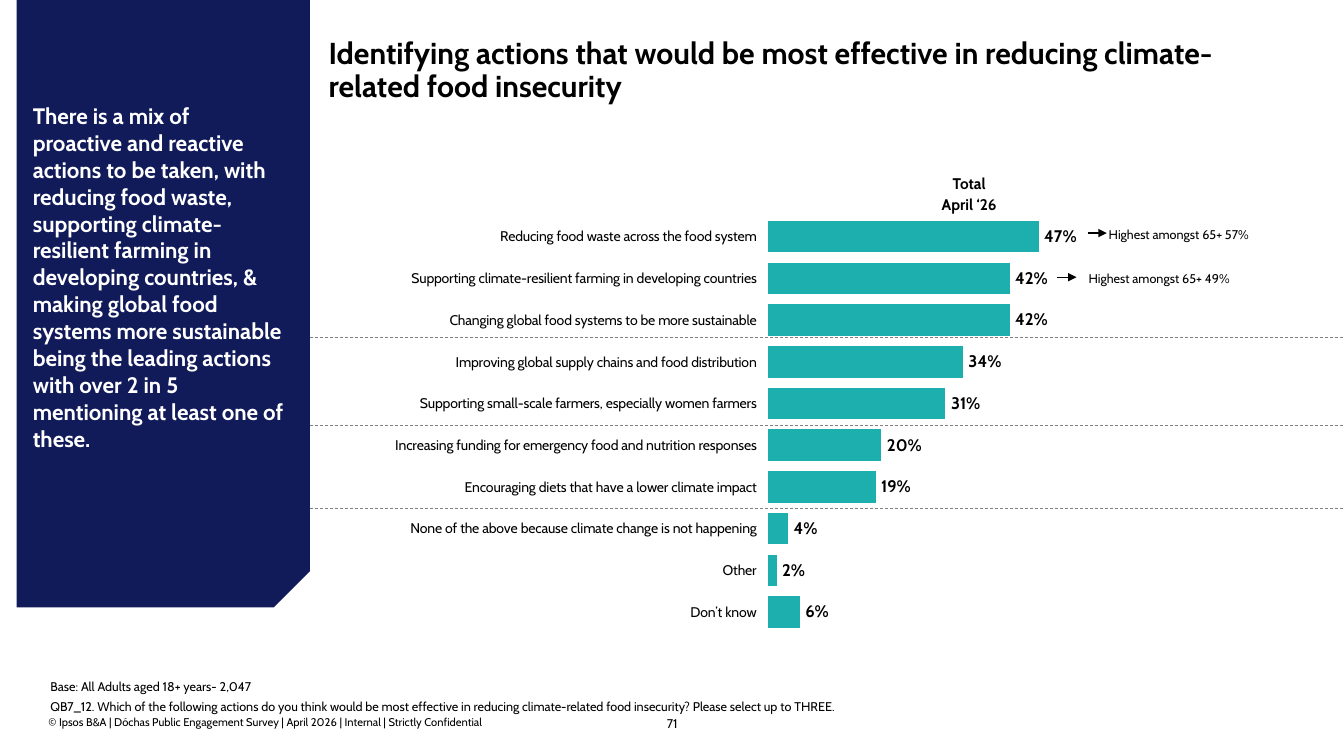
from dataclasses import dataclass

from lxml.etree import SubElement
from pptx import Presentation
from pptx.chart.data import CategoryChartData
from pptx.dml.color import RGBColor
from pptx.enum.chart import XL_CHART_TYPE, XL_LABEL_POSITION
from pptx.enum.dml import MSO_LINE
from pptx.enum.shapes import MSO_CONNECTOR, MSO_SHAPE
from pptx.enum.text import MSO_ANCHOR, PP_ALIGN
from pptx.oxml import parse_xml
from pptx.oxml.ns import nsdecls, qn
from pptx.util import Pt


@dataclass(frozen=True)
class Theme:
    font: str = "Cabin"
    black: RGBColor = RGBColor(0, 0, 0)
    white: RGBColor = RGBColor(255, 255, 255)
    navy: RGBColor = RGBColor(0x12, 0x1B, 0x5A)
    teal: RGBColor = RGBColor(0x1D, 0xAF, 0xAD)
    grey: RGBColor = RGBColor(0x80, 0x80, 0x80)
    title: float = 21.6
    panel: float = 16
    value: float = 12
    heading: float = 11
    category: float = 10
    note: float = 9
    footer: float = 8


@dataclass(frozen=True)
class Box:
    left: float
    top: float
    width: float
    height: float

    def lengths(self):
        return Pt(self.left), Pt(self.top), Pt(self.width), Pt(self.height)


THEME = Theme()
ACTIONS = {
    "Reducing food waste across the food system": 47,
    "Supporting climate-resilient farming in developing countries": 42,
    "Changing global food systems to be more sustainable": 42,
    "Improving global supply chains and food distribution": 34,
    "Supporting small-scale farmers, especially women farmers": 31,
    "Increasing funding for emergency food and nutrition responses": 20,
    "Encouraging diets that have a lower climate impact": 19,
    "None of the above because climate change is not happening": 4,
    "Other": 2,
    "Don’t know": 6,
}


def style_font(font, size, color=THEME.black, bold=False):
    font.name, font.size, font.bold = THEME.font, Pt(size), bold
    font.color.rgb = color


def set_margins(frame, left=0, top=0, right=0, bottom=0):
    frame.margin_left, frame.margin_top = Pt(left), Pt(top)
    frame.margin_right, frame.margin_bottom = Pt(right), Pt(bottom)


def add_text(slide, box, lines, size, bold=False, align=PP_ALIGN.LEFT,
             spacing=1.15, after=0):
    frame = slide.shapes.add_textbox(*box.lengths()).text_frame
    frame.word_wrap = True
    set_margins(frame)
    frame.text = "\n".join(lines)
    for para in frame.paragraphs:
        para.alignment, para.line_spacing = align, spacing
        para.space_after = Pt(after)
        style_font(para.font, size, bold=bold)


def add_line(slide, left, right, y, color, width):
    """Add a level connector without a shadow and return it."""
    line = slide.shapes.add_connector(
        MSO_CONNECTOR.STRAIGHT, Pt(left), Pt(y), Pt(right), Pt(y))
    line.line.color.rgb = color
    line.line.width = Pt(width)
    SubElement(line.element.spPr, qn("a:effectLst"))
    return line


def add_title(slide, box, text):
    title = slide.shapes.title
    title.left, title.top, title.width, title.height = box.lengths()
    frame = title.text_frame
    frame.word_wrap = True
    frame.vertical_anchor = MSO_ANCHOR.TOP
    set_margins(frame, 7.2, 3.6, 7.2, 3.6)
    frame.text = text
    para = frame.paragraphs[0]
    para.alignment, para.line_spacing = PP_ALIGN.LEFT, 0.9
    style_font(para.font, THEME.title, bold=True)


def add_panel(slide, box, text):
    """Turn a one-snip rectangle so its cut corner is at the bottom right."""
    turned = Box(box.left + (box.width - box.height) / 2,
                 box.top + (box.height - box.width) / 2,
                 box.height, box.width)
    panel = slide.shapes.add_shape(MSO_SHAPE.SNIP_1_RECTANGLE, *turned.lengths())
    panel.rotation = 90
    panel.adjustments[0] = 0.124
    panel.shadow.inherit = False
    panel.fill.solid()
    panel.fill.fore_color.rgb = THEME.navy
    panel.line.fill.background()
    frame = panel.text_frame
    frame.word_wrap = True
    frame.vertical_anchor = MSO_ANCHOR.TOP
    set_margins(frame, left=74, top=5.76, right=5.76, bottom=11.52)
    panel.element.txBody.find(qn("a:bodyPr")).set("vert", "vert270")
    frame.text = text
    para = frame.paragraphs[0]
    para.alignment = PP_ALIGN.LEFT
    style_font(para.font, THEME.panel, THEME.white, bold=True)


def add_actions_chart(slide, box):
    data = CategoryChartData(number_format="0")
    data.categories = list(ACTIONS)
    data.add_series("Total April ‘26", list(ACTIONS.values()))
    chart = slide.shapes.add_chart(
        XL_CHART_TYPE.BAR_CLUSTERED, *box.lengths(), data).chart
    chart.has_legend = chart.has_title = False
    style_font(chart.font, THEME.category)

    categories = chart.category_axis
    categories.reverse_order = True
    categories.has_major_gridlines = False
    categories.format.line.fill.background()
    style_font(categories.tick_labels.font, THEME.category)
    values = chart.value_axis
    values.minimum_scale, values.maximum_scale = 0, 80
    values.has_major_gridlines = False
    values.visible = False

    plot = chart.plots[0]
    plot.gap_width = 20
    plot.vary_by_categories = False
    series = plot.series[0]
    series.format.fill.solid()
    series.format.fill.fore_color.rgb = THEME.teal
    series.format.line.color.rgb = THEME.white
    series.format.line.width = Pt(2.25)
    labels = series.data_labels
    labels.show_value = True
    labels.position = XL_LABEL_POSITION.OUTSIDE_END
    labels.number_format, labels.number_format_is_linked = '#"%"', False
    style_font(labels.font, THEME.value, bold=True)
    set_plot_area(chart, x=0.48, y=0.01, w=0.42, h=0.99)


def set_plot_area(chart, **fractions):
    area = chart.element.find(".//" + qn("c:plotArea"))
    for layout in area.findall(qn("c:layout")):
        area.remove(layout)
    layout = parse_xml(f"<c:layout {nsdecls('c')}/>")
    manual = SubElement(layout, qn("c:manualLayout"))
    settings = {"layoutTarget": "inner", "xMode": "edge", "yMode": "edge"}
    for name, value in (settings | fractions).items():
        SubElement(manual, qn(f"c:{name}")).set("val", str(value))
    area.insert(0, layout)


def add_dividers(slide, left, right, heights):
    for y in heights:
        divider = add_line(slide, left, right, y, THEME.grey, 0.5)
        divider.line.dash_style = MSO_LINE.DASH


def add_callout(slide, arrow_left, text_left, y, text):
    arrow = add_line(slide, arrow_left, arrow_left + 13.7, y, THEME.black, 1)
    SubElement(arrow.element.spPr.find(qn("a:ln")), qn("a:tailEnd")).set("type", "triangle")
    add_text(slide, Box(text_left, y - 6.2, 124, 11.5), [text], THEME.note)


def add_footer(slide, box):
    add_text(slide, Box(box.left + 426.2, box.top, 38.9, 10.8), ["71"],
             THEME.note, align=PP_ALIGN.CENTER, spacing=1.1)
    add_text(slide, Box(box.left, box.top + 0.4, 420, 9.7),
             ["© Ipsos B&A | Dóchas Public Engagement Survey | April 2026 | "
              "Internal | Strictly Confidential"], THEME.footer, spacing=1)


def main():
    deck = Presentation()
    deck.slide_width, deck.slide_height = Pt(960), Pt(540)
    slide = deck.slides.add_slide(deck.slide_layouts[5])
    add_title(slide, Box(227.5, 24, 652.3, 54),
              "Identifying actions that would be most effective in reducing "
              "climate-related food insecurity")
    add_footer(slide, Box(34.6, 510.5, 465.1, 10.8))
    add_text(slide, Box(36, 483.1, 735.8, 27),
             ["Base: All Adults aged 18+ years- 2,047",
              "QB7_12. Which of the following actions do you think would be most "
              "effective in reducing climate-related food insecurity? Please select "
              "up to THREE."], THEME.note, after=2)
    add_actions_chart(slide, Box(167, 151.2, 792.7, 301))
    add_text(slide, Box(614.9, 122.4, 154.8, 31), ["Total", "April ‘26"],
             THEME.heading, bold=True, align=PP_ALIGN.CENTER)
    add_panel(slide, Box(11.9, -1, 209.5, 434.9),
              "There is a mix of proactive and reactive actions to be taken, with "
              "reducing food waste, supporting climate-resilient farming in developing "
              "countries, & making global food systems more sustainable being the "
              "leading actions with over 2 in 5 mentioning at least one of these.")
    add_dividers(slide, 221.5, 960, (241.2, 303.8, 362.9))
    add_callout(slide, 776.9, 792, 166.5, "Highest amongst 65+ 57%")
    add_callout(slide, 755.3, 777.6, 198, "Highest amongst 65+ 49%")
    deck.save("out.pptx")


if __name__ == "__main__":
    main()
